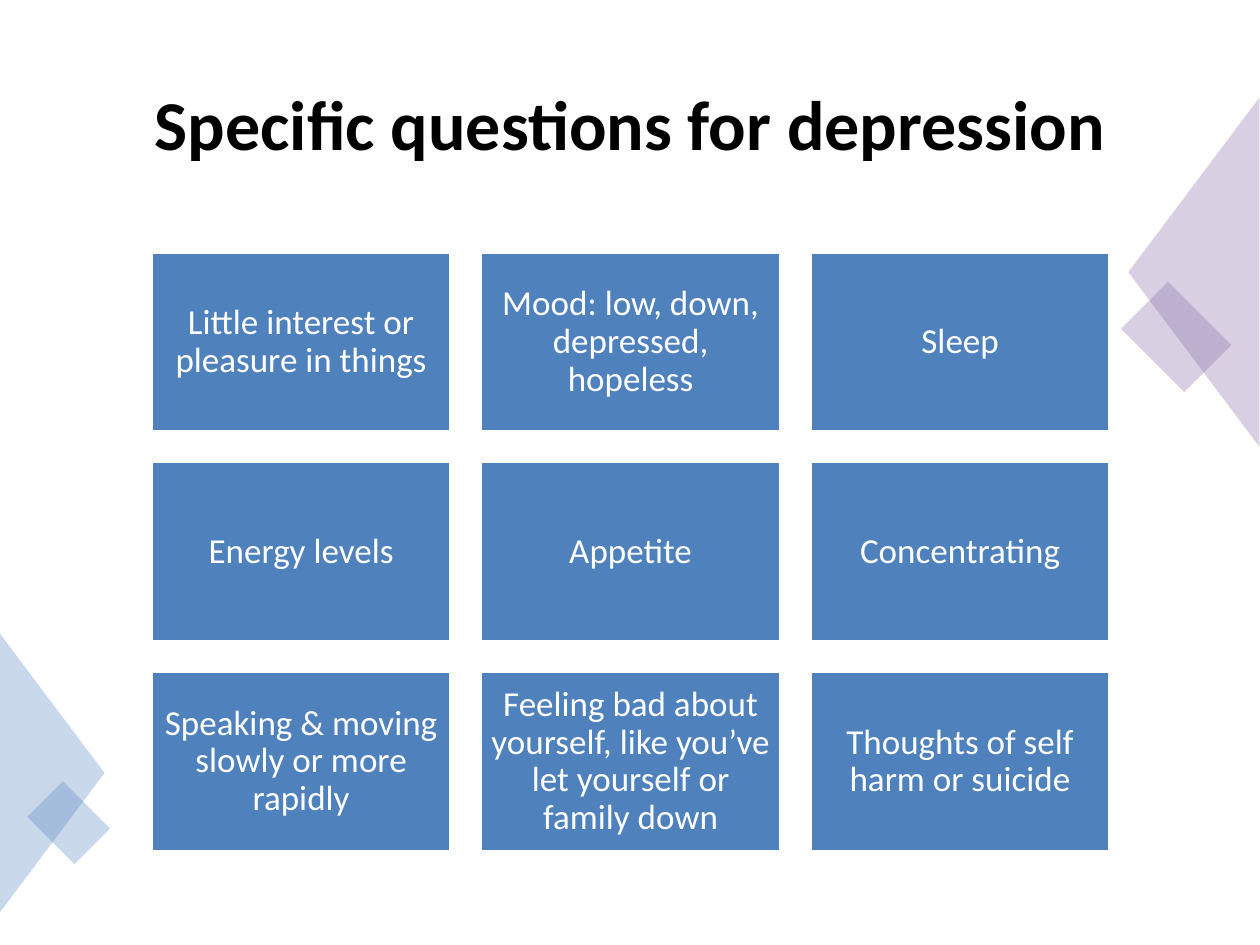
from dataclasses import dataclass

from lxml import etree
from pptx import Presentation
from pptx.dml.color import RGBColor
from pptx.enum.shapes import MSO_SHAPE
from pptx.enum.text import MSO_ANCHOR, PP_ALIGN
from pptx.oxml.ns import qn
from pptx.util import Inches, Pt

RECT = MSO_SHAPE.RECTANGLE
TRIANGLE = MSO_SHAPE.ISOSCELES_TRIANGLE
MIDDLE = MSO_ANCHOR.MIDDLE
CENTER = PP_ALIGN.CENTER


@dataclass(frozen=True)
class Theme:
    font: str = "Calibri"
    black: str = "000000"
    white: str = "FFFFFF"
    blue: str = "4F81BD"
    purple: str = "8064A2"
    title: int = 40
    body: int = 20


theme = Theme()


def write(frame, text, size, color, bold=False, spacing=1.0, inset=0.1):
    frame.word_wrap = True
    frame.vertical_anchor = MIDDLE
    frame.margin_left = frame.margin_right = Inches(inset)
    frame.margin_top = frame.margin_bottom = Inches(min(inset, 0.08))
    para = frame.paragraphs[0]
    para.alignment = CENTER
    para.line_spacing = spacing
    run = para.add_run()
    run.text = text
    run.font.name = theme.font
    run.font.size = Pt(size)
    run.font.bold = bold
    run.font.color.rgb = RGBColor.from_string(color)


def block(kind, left, top, width, height, color):
    shape = slide.shapes.add_shape(
        kind, Inches(left), Inches(top), Inches(width), Inches(height))
    shape.shadow.inherit = False
    shape.fill.solid()
    shape.fill.fore_color.rgb = RGBColor.from_string(color)
    return shape


deck = Presentation()
deck.slide_width, deck.slide_height = Inches(10), Inches(7.5)
slide = deck.slides.add_slide(deck.slide_layouts[5])

# Title
title = slide.shapes.title
title.left, title.top = Inches(0.53), Inches(0.35)
title.width, title.height = Inches(8.94), Inches(1.24)
write(title.text_frame, "Specific questions for depression",
      theme.title, theme.black, bold=True)

# Translucent corner shapes
decor = [
    (RECT, 8.98, 2.41, 0.71, 0.53, 45, theme.purple),
    (TRIANGLE, 8.09, 1.64, 2.77, 1.04, 270, theme.purple),
    (TRIANGLE, -0.69, 5.72, 2.21, 0.83, 90, theme.blue),
    (RECT, 0.28, 6.33, 0.53, 0.4, 45, theme.blue),
]
for kind, left, top, width, height, angle, color in decor:
    shape = block(kind, left, top, width, height, color)
    shape.rotation = angle
    shape.line.fill.background()
    tint = shape.fill._xPr.find(f".//{qn('a:srgbClr')}")
    etree.SubElement(tint, qn("a:alpha"), val="30000")

# Grid of question boxes
topics = [
    "Little interest or pleasure in things",
    "Mood: low, down, depressed, hopeless",
    "Sleep",
    "Energy levels",
    "Appetite",
    "Concentrating",
    "Speaking & moving slowly or more rapidly",
    "Feeling bad about yourself, like you’ve let yourself or family down",
    "Thoughts of self harm or suicide",
]
COLS = 3
LEFT, TOP = 1.2, 2.0
WIDE, HIGH = 2.38, 1.43
GAP = 0.235
for index, topic in enumerate(topics):
    row, col = divmod(index, COLS)
    box = block(RECT, LEFT + col * (WIDE + GAP), TOP + row * (HIGH + GAP),
                WIDE, HIGH, theme.blue)
    box.line.color.rgb = RGBColor.from_string(theme.white)
    box.line.width = Pt(2)
    write(box.text_frame, topic, theme.body, theme.white,
          spacing=0.9, inset=0.08)

deck.save("out.pptx")
